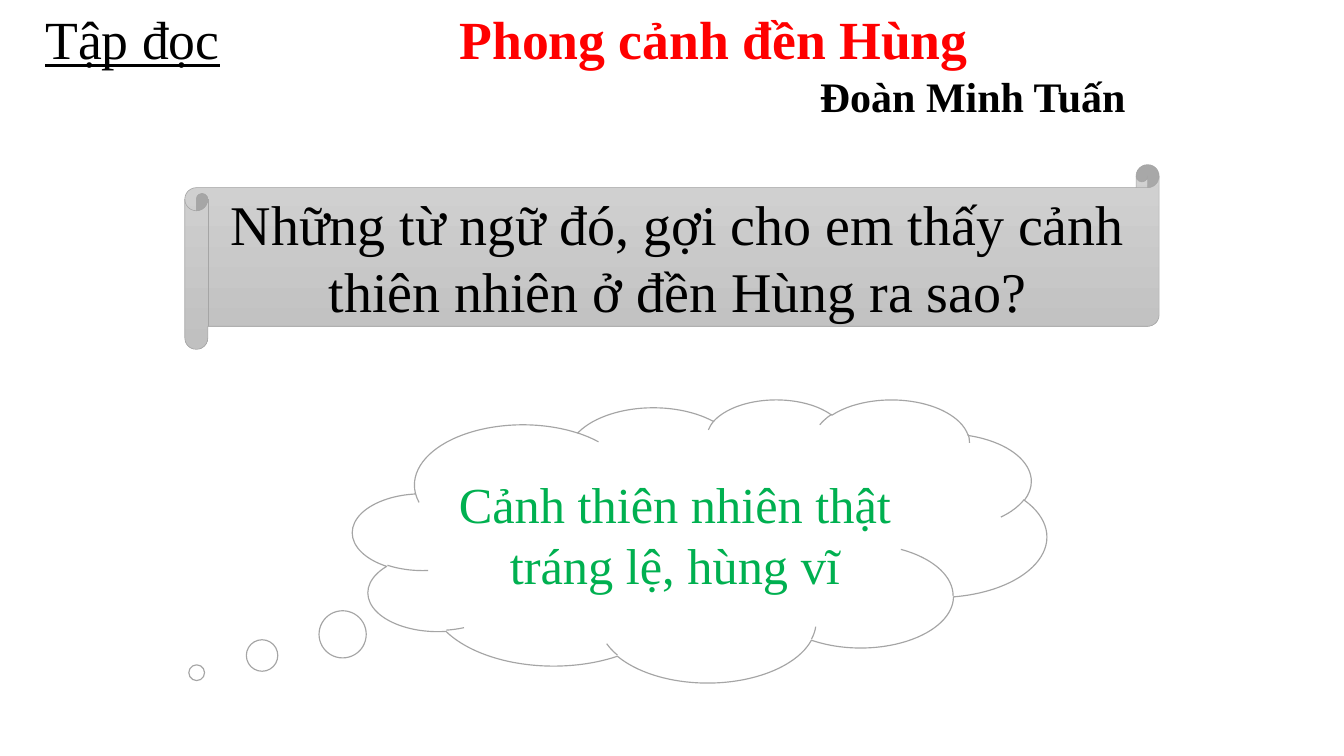
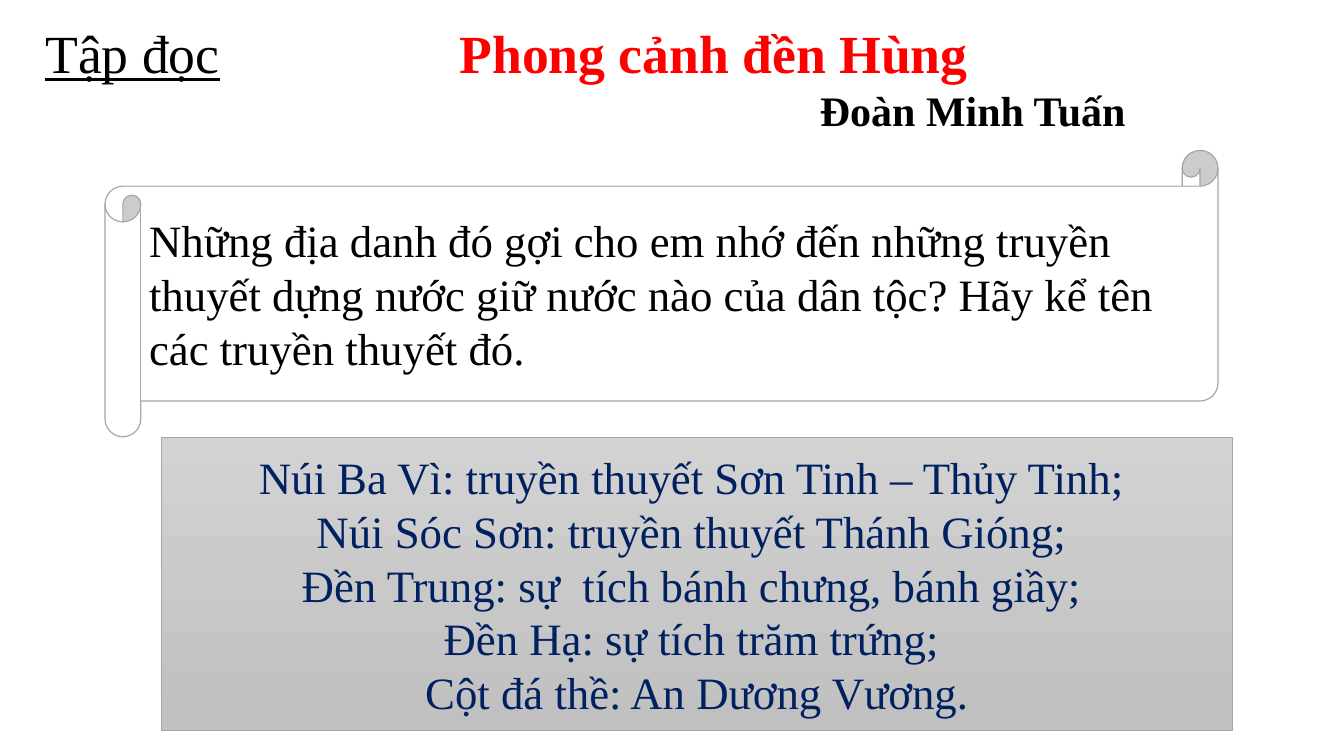
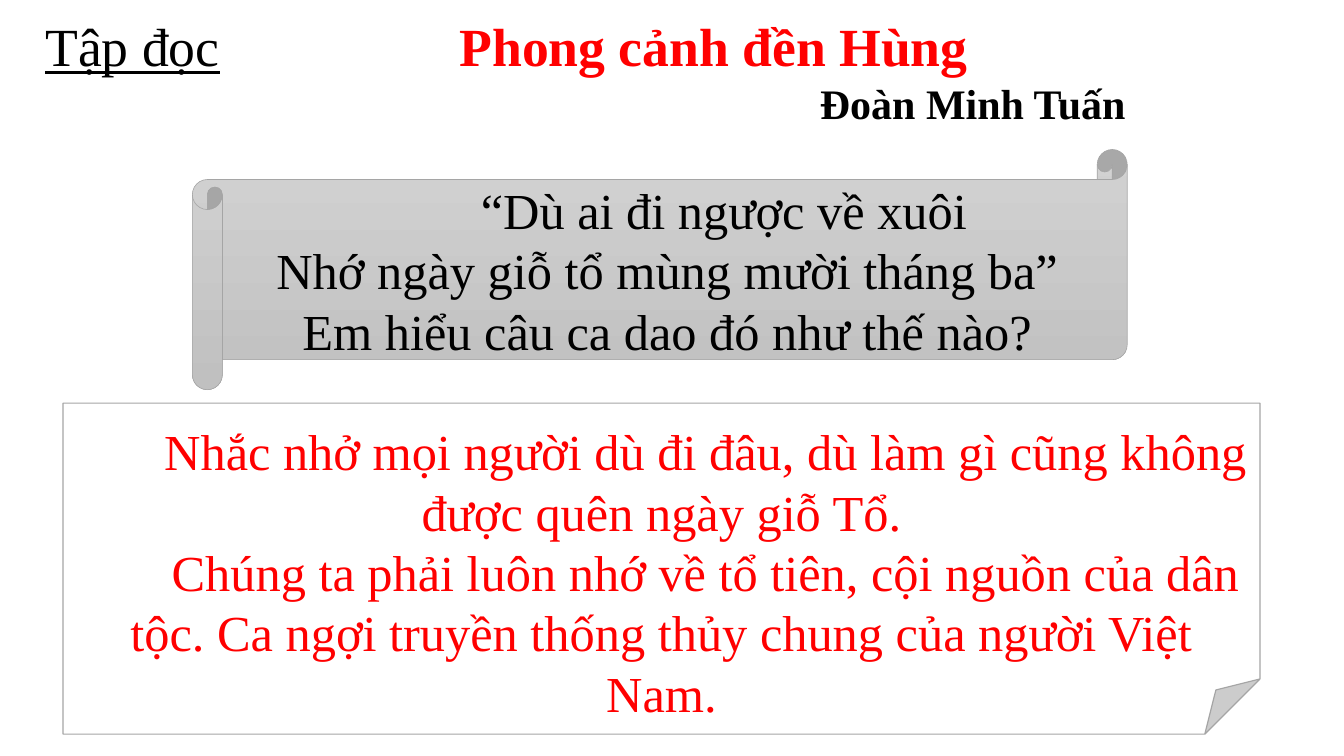
from pptx import Presentation
from pptx.dml.color import RGBColor
from pptx.enum.shapes import MSO_SHAPE
from pptx.enum.text import MSO_ANCHOR, PP_ALIGN
from pptx.util import Inches, Pt

SCROLL = MSO_SHAPE.HORIZONTAL_SCROLL
CLOUD = MSO_SHAPE.CLOUD_CALLOUT
PANEL = MSO_SHAPE.RECTANGLE
NOTE = MSO_SHAPE.FOLDED_CORNER
MIDDLE = MSO_ANCHOR.MIDDLE
LEFT, CENTER = PP_ALIGN.LEFT, PP_ALIGN.CENTER

WHITE = RGBColor(0xFF, 0xFF, 0xFF)
BLACK = RGBColor(0x00, 0x00, 0x00)
RED = RGBColor(0xFF, 0x00, 0x00)
GREEN = RGBColor(0x00, 0xB0, 0x50)
NAVY = RGBColor(0x00, 0x20, 0x60)
GREY = RGBColor(0xA5, 0xA5, 0xA5)
LIGHT = RGBColor(0xD2, 0xD2, 0xD2)
DARK = RGBColor(0xC0, 0xC0, 0xC0)
FONT = "Times New Roman"

SLIDES = [
    (0, [
        (SCROLL, (2.2, 1.96, 11.6, 2.2), True, 48, BLACK, CENTER, [0],
         ["Những từ ngữ đó, gợi cho em thấy cảnh thiên nhiên ở đền Hùng ra sao?"]),
        (CLOUD, (4.2, 4.75, 8.26, 3.37), False, 43.2, GREEN, CENTER, [0],
         ["Cảnh thiên nhiên thật tráng lệ, hùng vĩ"]),
    ]),
    (0.17, [
        (PANEL, (1.92, 5.21, 12.75, 3.49), True, 38.4, NAVY, CENTER, [0] * 5,
         ["Núi Ba Vì: truyền thuyết Sơn Tinh – Thủy Tinh; ",
          "Núi Sóc Sơn: truyền thuyết Thánh Gióng; ",
          "Đền Trung: sự  tích bánh chưng, bánh giầy; ",
          "Đền Hạ: sự tích trăm trứng; ",
          "Cột đá thề: An Dương Vương."]),
        (SCROLL, (1.25, 1.79, 13.25, 3.41), False, 38.4, BLACK, LEFT, [0],
         ["Những địa danh đó gợi cho em nhớ đến những truyền thuyết dựng nước "
          "giữ nước nào của dân tộc? Hãy kể tên các truyền thuyết đó."]),
    ]),
    (0.08, [
        (SCROLL, (2.29, 1.78, 11.13, 2.86), True, 43.2, BLACK, CENTER, [1.35, 0, 0],
         ["“Dù ai đi ngược về xuôi",
          "Nhớ ngày giỗ tổ mùng mười tháng ba”",
          "Em hiểu câu ca dao đó như thế nào?"]),
        (NOTE, (0.75, 4.8, 14.25, 3.94), False, 43.2, RED, CENTER, [1.05, 1.05],
         ["Nhắc nhở mọi người dù đi đâu, dù làm gì cũng không được quên ngày giỗ Tổ.",
          "Chúng ta phải luôn nhớ về tổ tiên, cội nguồn của dân tộc. "
          "Ca ngợi truyền thống thủy chung của người Việt Nam."]),
    ]),
]


def write(para, text, size, color, bold=False, line=False):
    para.text = text
    font = para.font
    font.name, font.size, font.color.rgb = FONT, Pt(size), color
    font.bold, font.underline = bold, line


def add_box(slide, left, top, width, height):
    box = slide.shapes.add_textbox(Inches(left), Inches(top), Inches(width), Inches(height))
    frame = box.text_frame
    frame.word_wrap = True
    frame.margin_left = frame.margin_right = Inches(0.14)
    frame.margin_top = frame.margin_bottom = Inches(0.07)
    return frame


deck = Presentation()
deck.slide_width, deck.slide_height = Inches(16), Inches(9)

for top, cards in SLIDES:
    slide = deck.slides.add_slide(deck.slide_layouts[6])

    for kind, place, shaded, size, color, align, indents, lines in cards:
        card = slide.shapes.add_shape(kind, *[Inches(n) for n in place])
        card.shadow.inherit = False
        card.line.color.rgb = GREY
        card.line.width = Pt(0.5 if shaded else 1)
        if shaded:
            card.fill.gradient()
            card.fill.gradient_angle = 270
            for stop, tone in zip(card.fill.gradient_stops, (LIGHT, DARK)):
                stop.color.rgb = tone
        else:
            card.fill.solid()
            card.fill.fore_color.rgb = WHITE
        if kind == CLOUD:
            card.adjustments[0], card.adjustments[1] = -0.725, 0.467

        frame = card.text_frame
        frame.word_wrap = True
        frame.vertical_anchor = MIDDLE
        if kind == NOTE:
            frame.margin_top = Inches(0.77)
        for i, (text, indent) in enumerate(zip(lines, indents)):
            para = frame.add_paragraph() if i else frame.paragraphs[0]
            write(para, text, size, color)
            para.alignment = align
            if indent:
                para._p.get_or_add_pPr().set("indent", str(Inches(indent)))

    subject = add_box(slide, 0.4, top, 2.38, 0.92)
    write(subject.paragraphs[0], "Tập đọc", 46, BLACK, line=True)

    title = add_box(slide, 5.33, top, 8.29, 1.69)
    write(title.paragraphs[0], "Phong cảnh đền Hùng", 46, RED, bold=True)
    author = title.add_paragraph()
    write(author, "Đoàn Minh Tuấn", 36, BLACK, bold=True)
    author._p.get_or_add_pPr().set("marL", str(Inches(4.29)))

deck.save("out.pptx")
